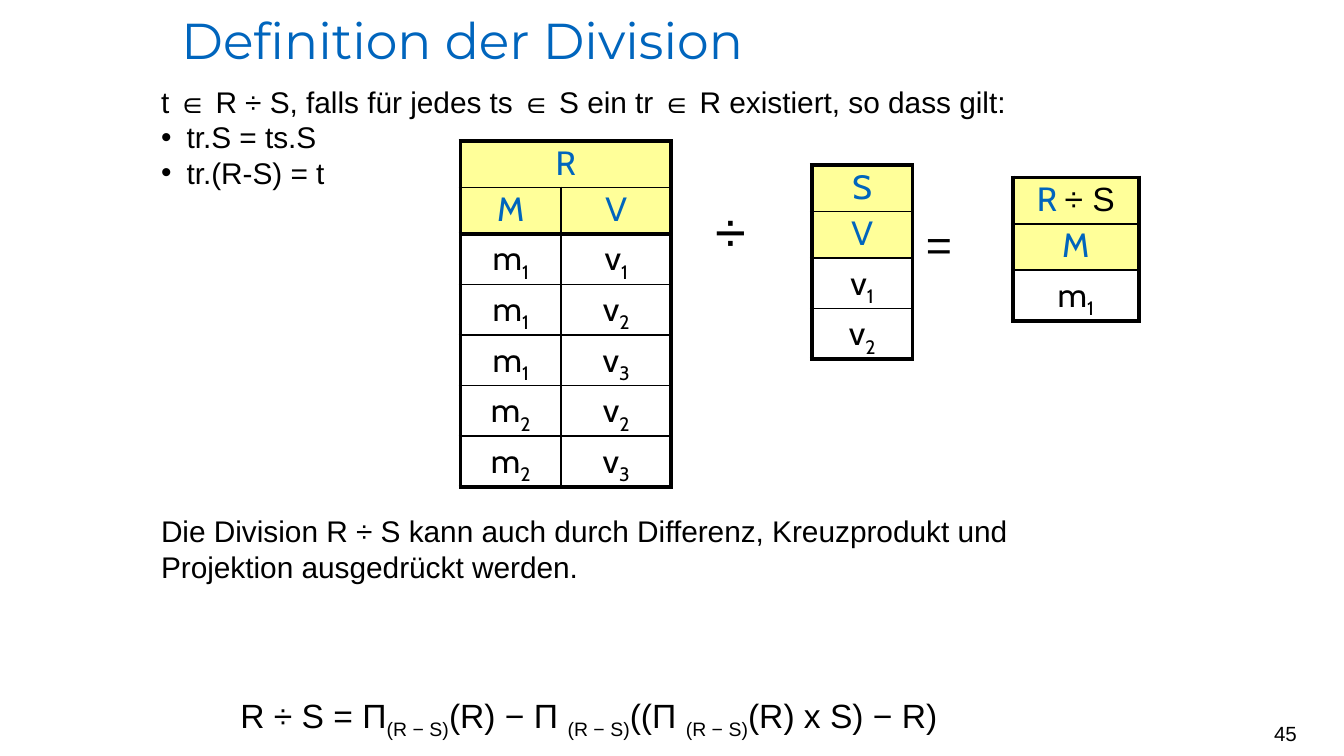
import dataclasses

import lxml.etree
import pptx
import pptx.dml.color
import pptx.enum.text
import pptx.oxml.ns
import pptx.util

PX = 4572
ALIGN = pptx.enum.text.PP_ALIGN
ANCHOR = pptx.enum.text.MSO_ANCHOR


@dataclasses.dataclass(frozen=True)
class Theme:
    """Colours, fonts and type sizes of the slide."""
    ink: str = "000000"
    accent: str = "0065BD"
    header: str = "FFFF99"
    text_font: str = "Arial"
    title_font: str = "Montserrat"
    table_font: str = "Cabin"
    title: int = 27
    body: int = 16
    formula: int = 18
    cell: int = 18
    divide: int = 30
    equals: int = 24
    number: int = 11
    thick: float = 2.25
    thin: float = 1


THEME = Theme()


def px(length):
    """Turn px into EMU."""
    return pptx.util.Emu(length * PX)


def add_xml(parent, tag, **attributes):
    """Append a DrawingML element."""
    return lxml.etree.SubElement(parent, pptx.oxml.ns.qn(tag), **attributes)


def add_run(paragraph, text, size, font=THEME.text_font, color=THEME.ink, sub=False):
    """Append one formatted run."""
    run = paragraph.add_run()
    run.text = text
    run.font.size = pptx.util.Pt(size)
    run.font.name = font
    run.font.color.rgb = pptx.dml.color.RGBColor.from_string(color)
    if sub:
        run._r.get_or_add_rPr().set("baseline", "-25000")


def add_frame(slide, box):
    """Place a wrapping text box and return its text frame."""
    frame = slide.shapes.add_textbox(*map(px, box)).text_frame
    frame.word_wrap = True
    return frame


def add_title(slide, box, text):
    """Move and format the title placeholder."""
    title = slide.shapes.title
    title.left, title.top, title.width, title.height = map(px, box)
    frame = title.text_frame
    frame.auto_size = pptx.enum.text.MSO_AUTO_SIZE.NONE
    frame.vertical_anchor = ANCHOR.BOTTOM
    frame.paragraphs[0].alignment = ALIGN.LEFT
    add_run(frame.paragraphs[0], text, THEME.title, THEME.title_font, THEME.accent)


def add_definition(slide, box, intro, conditions, remark):
    """Write the definition, its bulleted conditions and the remark below the tables."""
    frame = add_frame(slide, box)
    add_run(frame.paragraphs[0], intro, THEME.body)
    for condition in conditions:
        paragraph = frame.add_paragraph()
        properties = paragraph._p.get_or_add_pPr()
        properties.set("marL", str(px(38)))
        properties.set("indent", str(px(-38)))
        properties.set("lvl", "1")
        add_xml(properties, "a:buFont", typeface=THEME.text_font)
        add_xml(properties, "a:buChar", char="•")
        add_run(paragraph, condition, THEME.body)
    closing = frame.add_paragraph()
    closing.space_before = pptx.util.Pt(172.5)
    add_run(closing, remark, THEME.body)


def set_borders(cell, thick_sides):
    """Draw the four cell borders, heavier on the given sides."""
    properties = cell._tc.get_or_add_tcPr()
    for side in "LRTB":
        width = THEME.thick if side in thick_sides else THEME.thin
        line = add_xml(properties, f"a:ln{side}", w=str(pptx.util.Pt(width)))
        add_xml(add_xml(line, "a:solidFill"), "a:srgbClr", val=THEME.ink)


def fill_cell(cell, runs, is_header):
    """Format one cell and write its runs."""
    cell.margin_left = cell.margin_right = 0
    cell.margin_top = cell.margin_bottom = px(7)
    if is_header:
        cell.fill.solid()
        cell.fill.fore_color.rgb = pptx.dml.color.RGBColor.from_string(THEME.header)
    else:
        cell.fill.background()
    paragraph = cell.text_frame.paragraphs[0]
    paragraph.alignment = ALIGN.CENTER
    paragraph.line_spacing = 0.9
    for text, options in runs:
        add_run(paragraph, text, THEME.cell, **options)


def add_relation(slide, left, top, widths, name, attributes, tuples, heavy_rule=False):
    """Build a relation table: name, attributes, then indexed values."""
    label = {"font": THEME.table_font, "color": THEME.accent}
    value = {"font": THEME.table_font}
    columns, rows, row_height = len(widths), len(tuples) + 2, 69
    frame = slide.shapes.add_table(
        rows, columns, px(left), px(top), px(sum(widths)), px(row_height * rows))
    table = frame.table
    table.first_row = table.horz_banding = False
    for column, width in zip(table.columns, widths):
        column.width = px(width)
    if columns > 1:
        table.cell(0, 0).merge(table.cell(0, columns - 1))

    symbol, space, rest = name.partition(" ")
    heading = [(symbol + space, label)] + ([(rest, {})] if rest else [])
    contents = [[heading] + [[]] * (columns - 1), [[(a, label)] for a in attributes]]
    for row in tuples:
        contents.append([[(v[0], value), (v[1:], {**value, "sub": True})] for v in row])

    for r, row in enumerate(contents):
        for c, runs in enumerate(row):
            cell = table.cell(r, c)
            edges = {
                "L": c == 0,
                "R": c + cell.span_width == columns or cell.is_spanned,
                "T": r == 0 or heavy_rule and r == 2,
                "B": r == rows - 1 or heavy_rule and r == 1,
            }
            set_borders(cell, [side for side, thick in edges.items() if thick])
            fill_cell(cell, runs, r < 2)


def add_operator(slide, box, symbol, size):
    """Place an operator between two relations."""
    add_run(add_frame(slide, box).paragraphs[0], symbol, size)


def add_formula(slide, box, parts):
    """Write the formula, every second part as a subscript."""
    paragraph = add_frame(slide, box).paragraphs[0]
    for index, part in enumerate(parts):
        add_run(paragraph, part, THEME.formula, sub=index % 2 == 1)


def add_page_number(slide, box, number):
    """Write the page number at the right."""
    frame = add_frame(slide, box)
    frame.margin_left = frame.margin_right = 0
    frame.vertical_anchor = ANCHOR.MIDDLE
    frame.paragraphs[0].alignment = ALIGN.RIGHT
    add_run(frame.paragraphs[0], number, THEME.number)


def main():
    """Build and save the slide."""
    deck = pptx.Presentation()
    deck.slide_width, deck.slide_height = px(2000), px(1125)
    slide = deck.slides.add_slide(deck.slide_layouts[5])

    add_title(slide, (250, 0, 1500, 114), "Definition der Division")
    add_definition(
        slide, (220, 114, 1500, 1011),
        "t ∈ R ÷ S, falls für jedes ts ∈ S ein tr ∈ R existiert, so dass gilt:",
        ["tr.S = ts.S", "tr.(R-S) = t"],
        "Die Division R ÷ S kann auch durch Differenz, Kreuzprodukt und "
        "Projektion ausgedrückt werden.")
    pairs = [("m1", "v1"), ("m1", "v2"), ("m1", "v3"), ("m2", "v2"), ("m2", "v3")]
    add_relation(slide, 685, 210, [150, 164], "R", "MV", pairs, heavy_rule=True)
    add_operator(slide, (1045, 282, 138, 122), "÷", THEME.divide)
    add_relation(slide, 1208, 246, [150], "S", "V", [("v1",), ("v2",)])
    add_operator(slide, (1358, 313, 138, 100), "=", THEME.equals)
    add_relation(slide, 1507, 264, [188], "R ÷ S", "M", [("m1",)])
    add_formula(
        slide, (338, 1024, 1324, 80),
        ["R ÷ S = Π", "(R − S)", "(R) − Π ", "(R − S)", "((Π ", "(R − S)",
         "(R) x S) − R)"])
    add_page_number(slide, (1482, 1062, 448, 60), "45")
    deck.save("out.pptx")


if __name__ == "__main__":
    main()
